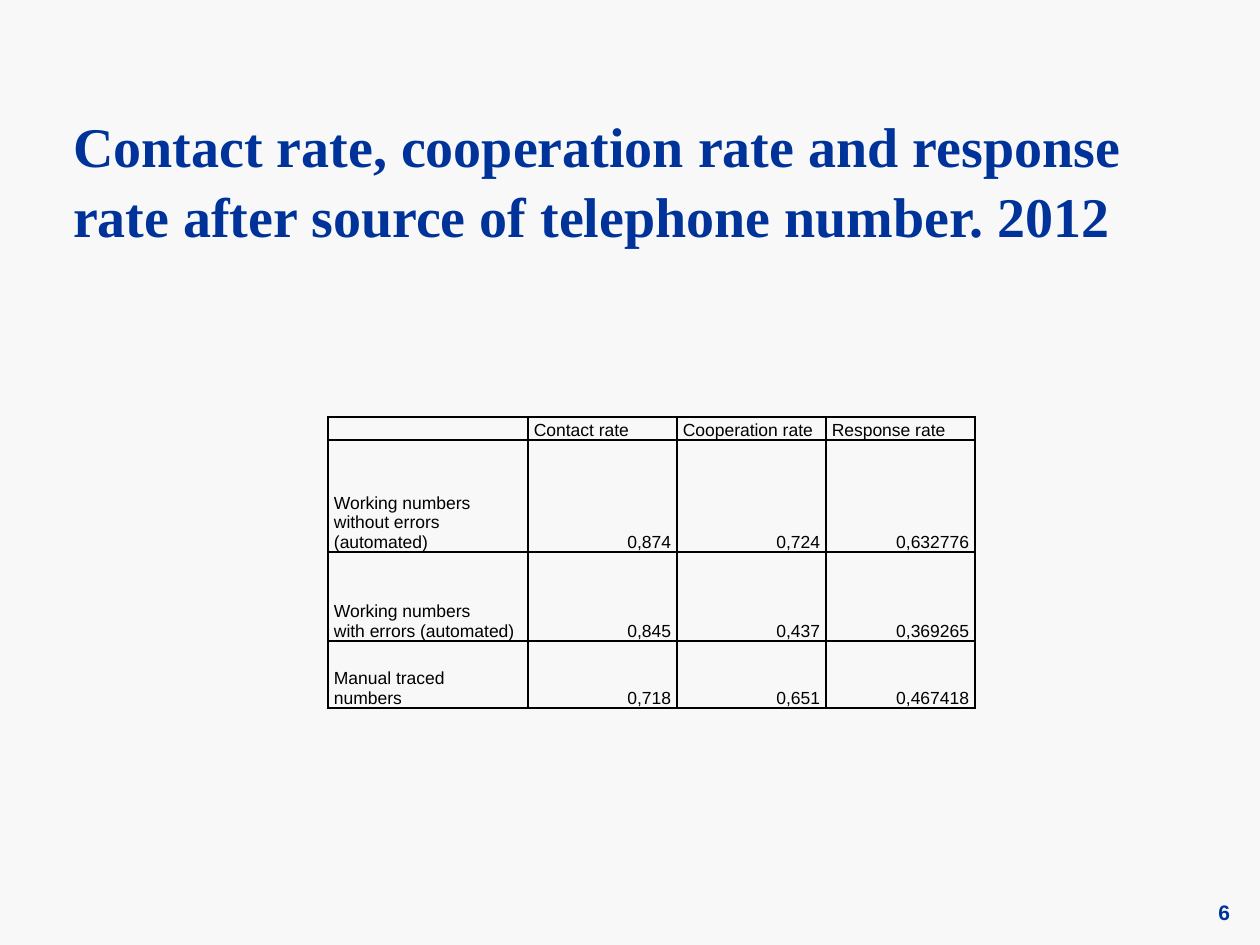
from lxml.etree import SubElement as Sub
from pptx import Presentation
from pptx.dml.color import RGBColor as RGB
from pptx.enum.text import MSO_ANCHOR as ANC, PP_ALIGN as AL
from pptx.oxml.ns import qn
from pptx.util import Pt

# Content
TITLE = ("Contact rate, cooperation rate and response rate "
         "after source of telephone number. 2012")
ROWS = [
    ("", "Contact rate", "Cooperation rate", "Response rate"),
    ("Working numbers \vwithout errors (automated)", "0,874", "0,724", "0,632776"),
    ("Working numbers \vwith errors (automated)", "0,845", "0,437", "0,369265"),
    ("Manual traced \vnumbers", "0,718", "0,651", "0,467418"),
]
PAGE = "6"

# Theme and geometry, lengths in px
THEME = {
    "back": "F8F8F8", "blue": "003399", "ink": "000000",
    "serif": "Times New Roman", "sans": "Arial",
    "title": 32, "cell": 10, "page": 12, "rule": 1,
}
PX = 914400 // 126
WIDE = [200, 149, 149, 149]
HIGH = [23, 112, 89, 67]


def px(*vals):
    return [v * PX for v in vals]


def style(par, face, size, color, bold=False):
    for run in par.runs:
        font = run.font
        font.name, font.size, font.bold = THEME[face], Pt(THEME[size]), bold
        font.color.rgb = RGB.from_string(THEME[color])


def label(slide, box, text, face, size, pad=0):
    frame = slide.shapes.add_textbox(*px(*box)).text_frame
    frame.word_wrap = True
    frame.margin_left = frame.margin_right = frame.margin_bottom = 0
    frame.margin_top = pad * PX
    frame.text = text
    par = frame.paragraphs[0]
    style(par, face, size, "blue", True)
    return frame, par


def border(cell):
    props = cell._tc.get_or_add_tcPr()
    for at, side in enumerate(("lnL", "lnR", "lnT", "lnB")):
        line = props.makeelement(qn("a:" + side), {"w": str(Pt(THEME["rule"]))})
        fill = Sub(line, qn("a:solidFill"))
        Sub(fill, qn("a:srgbClr"), val=THEME["ink"])
        props.insert(at, line)


def fill_cell(cell, text, right):
    cell.text = text
    cell.fill.background()
    cell.vertical_anchor = ANC.BOTTOM
    cell.margin_left = cell.margin_right = 6 * PX
    cell.margin_top = cell.margin_bottom = 0
    par = cell.text_frame.paragraphs[0]
    par.alignment = AL.RIGHT if right else AL.LEFT
    style(par, "sans", "cell", "ink")
    # Breaks and empty cells need the type size too
    size = str(THEME["cell"] * 100)
    for gap in par._p.findall(qn("a:br")):
        Sub(gap, qn("a:rPr"), sz=size)
    if not text:
        Sub(par._p, qn("a:endParaRPr"), sz=size)
    border(cell)


def main():
    prs = Presentation()
    prs.slide_width, prs.slide_height = px(1260, 945)
    slide = prs.slides.add_slide(prs.slide_layouts[6])
    back = slide.background.fill
    back.solid()
    back.fore_color.rgb = RGB.from_string(THEME["back"])

    # Title
    _, par = label(slide, (73, 105, 1155, 116), TITLE, "serif", "title", 4)
    par.line_spacing = 1.04

    # Table of rates
    box = px(328, 417, sum(WIDE), sum(HIGH))
    table = slide.shapes.add_table(len(ROWS), len(WIDE), *box).table
    table.first_row = table.horz_banding = False
    for col, wide in zip(table.columns, WIDE):
        col.width = wide * PX
    for r, (texts, high) in enumerate(zip(ROWS, HIGH)):
        table.rows[r].height = high * PX
        for c, text in enumerate(texts):
            fill_cell(table.cell(r, c), text, r > 0 and c > 0)

    # Page number
    frame, par = label(slide, (1166, 896, 64, 33), PAGE, "sans", "page")
    frame.vertical_anchor = ANC.MIDDLE
    par.alignment = AL.RIGHT

    prs.save("out.pptx")


if __name__ == "__main__":
    main()
